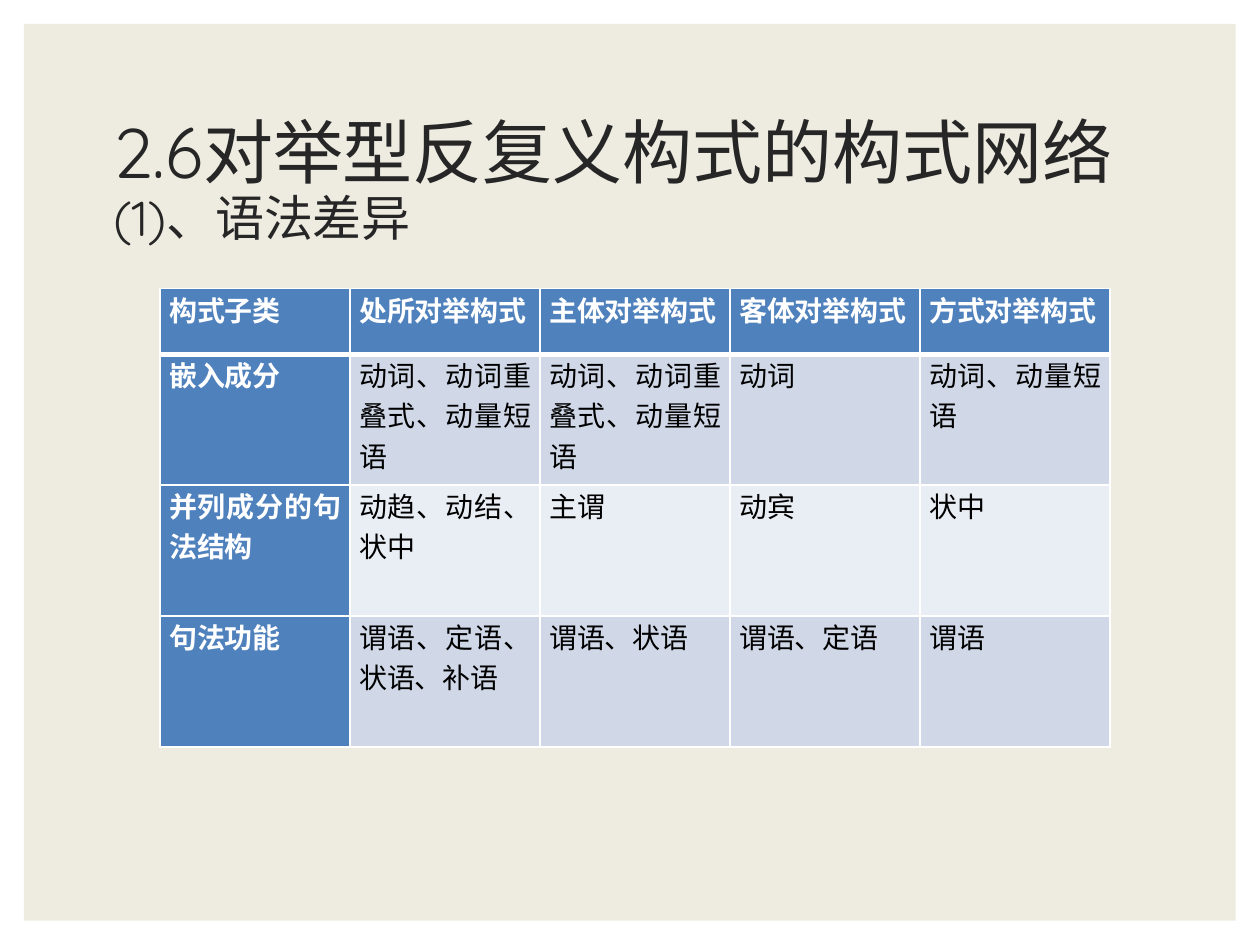
from dataclasses import dataclass

from lxml import etree
from pptx import Presentation
from pptx.dml.color import RGBColor
from pptx.enum import shapes, text
from pptx.oxml import ns
from pptx.util import Cm, Pt


@dataclass(frozen=True)
class Theme:
    font: str = "Quicksand"
    panel: str = "EEECE1"
    title: str = "262626"
    head: str = "4F81BD"
    bands: tuple = ("D0D8E8", "E9EDF4")
    light: str = "FFFFFF"
    dark: str = "000000"
    title_size: int = 40
    subtitle_size: int = 28
    cell_size: int = 16


THEME = Theme()
ROWS = [
    ["构式子类", "处所对举构式", "主体对举构式", "客体对举构式", "方式对举构式"],
    ["嵌入成分", "动词、动词重叠式、动量短语", "动词、动词重叠式、动量短语",
     "动词", "动词、动量短语"],
    ["并列成分的句法结构", "动趋、动结、状中", "主谓", "动宾", "状中"],
    ["句法功能", "谓语、定语、状语、补语", "谓语、状语", "谓语、定语", "谓语"],
]
COL_WIDTH, HEAD_HEIGHT, ROW_HEIGHT = Cm(3.83), Cm(1.32), Cm(2.64)


def set_attrs(target, values):
    for name, value in values.items():
        setattr(target, name, value)


def add_run(p, content, size, color, bold=False):
    r = p.add_run()
    r.text = content
    set_attrs(r.font, {"name": THEME.font, "size": Pt(size), "bold": bold})
    r.font.color.rgb = RGBColor.from_string(color)


def add_panel(s):
    """Add the tinted panel behind everything else."""
    sp = s.shapes.add_shape(shapes.MSO_SHAPE.RECTANGLE,
                            Cm(0.48), Cm(0.48), Cm(24.43), Cm(18.08))
    sp.shadow.inherit = False
    sp.fill.solid()
    sp.fill.fore_color.rgb = RGBColor.from_string(THEME.panel)
    sp.line.fill.background()
    s.shapes._spTree.insert(2, sp._element)


def fill_title(s, heading, subheading):
    sp = s.shapes.title
    set_attrs(sp, {"left": Cm(2.03), "top": Cm(1.78),
                   "width": Cm(21.34), "height": Cm(3.81)})
    tf = sp.text_frame
    set_attrs(tf, {"word_wrap": True, "auto_size": text.MSO_AUTO_SIZE.NONE,
                   "vertical_anchor": text.MSO_ANCHOR.MIDDLE})
    p = tf.paragraphs[0]
    set_attrs(p, {"alignment": text.PP_ALIGN.LEFT, "line_spacing": 0.9})
    add_run(p, heading, THEME.title_size, THEME.title)
    p.add_line_break()
    add_run(p, subheading, THEME.subtitle_size, THEME.title)


def set_borders(cell, widths):
    """Draw borders; widths maps L, R, T, B (in that order) to points."""
    tc_pr = cell._tc.get_or_add_tcPr()
    for i, (side, width) in enumerate(widths.items()):
        ln = etree.Element(ns.qn(f"a:ln{side}"), w=str(Pt(width)))
        fill = etree.SubElement(ln, ns.qn("a:solidFill"))
        etree.SubElement(fill, ns.qn("a:srgbClr"), val=THEME.light)
        tc_pr.insert(i, ln)


def format_cell(cell, content, row, col):
    is_head = row == 0 or col == 0
    set_attrs(cell, {"margin_left": Cm(0.18), "margin_right": Cm(0.18),
                     "margin_top": 0, "margin_bottom": 0})
    cell.fill.solid()
    color = THEME.head if is_head else THEME.bands[(row - 1) % 2]
    cell.fill.fore_color.rgb = RGBColor.from_string(color)
    p = cell.text_frame.paragraphs[0]
    p.alignment = text.PP_ALIGN.JUSTIFY
    add_run(p, content, THEME.cell_size,
            THEME.light if is_head else THEME.dark, is_head)
    set_borders(cell, {"L": 1, "R": 1, "T": 3 if row == 1 else 1,
                       "B": 3 if row == 0 else 1})


def add_comparison(s, rows):
    n_rows, n_cols = len(rows), len(rows[0])
    table = s.shapes.add_table(
        n_rows, n_cols, Cm(3.23), Cm(5.82), COL_WIDTH * n_cols,
        HEAD_HEIGHT + ROW_HEIGHT * (n_rows - 1)).table
    table.first_col = True
    for column in table.columns:
        column.width = COL_WIDTH
    for i, values in enumerate(rows):
        table.rows[i].height = ROW_HEIGHT if i else HEAD_HEIGHT
        for j, value in enumerate(values):
            format_cell(table.cell(i, j), value, i, j)


def main():
    prs = Presentation()
    set_attrs(prs, {"slide_width": Cm(25.4), "slide_height": Cm(19.05)})
    s = prs.slides.add_slide(prs.slide_layouts[5])
    add_panel(s)
    fill_title(s, "2.6对举型反复义构式的构式网络", "(1)、语法差异")
    add_comparison(s, ROWS)
    prs.save("out.pptx")


if __name__ == "__main__":
    main()
